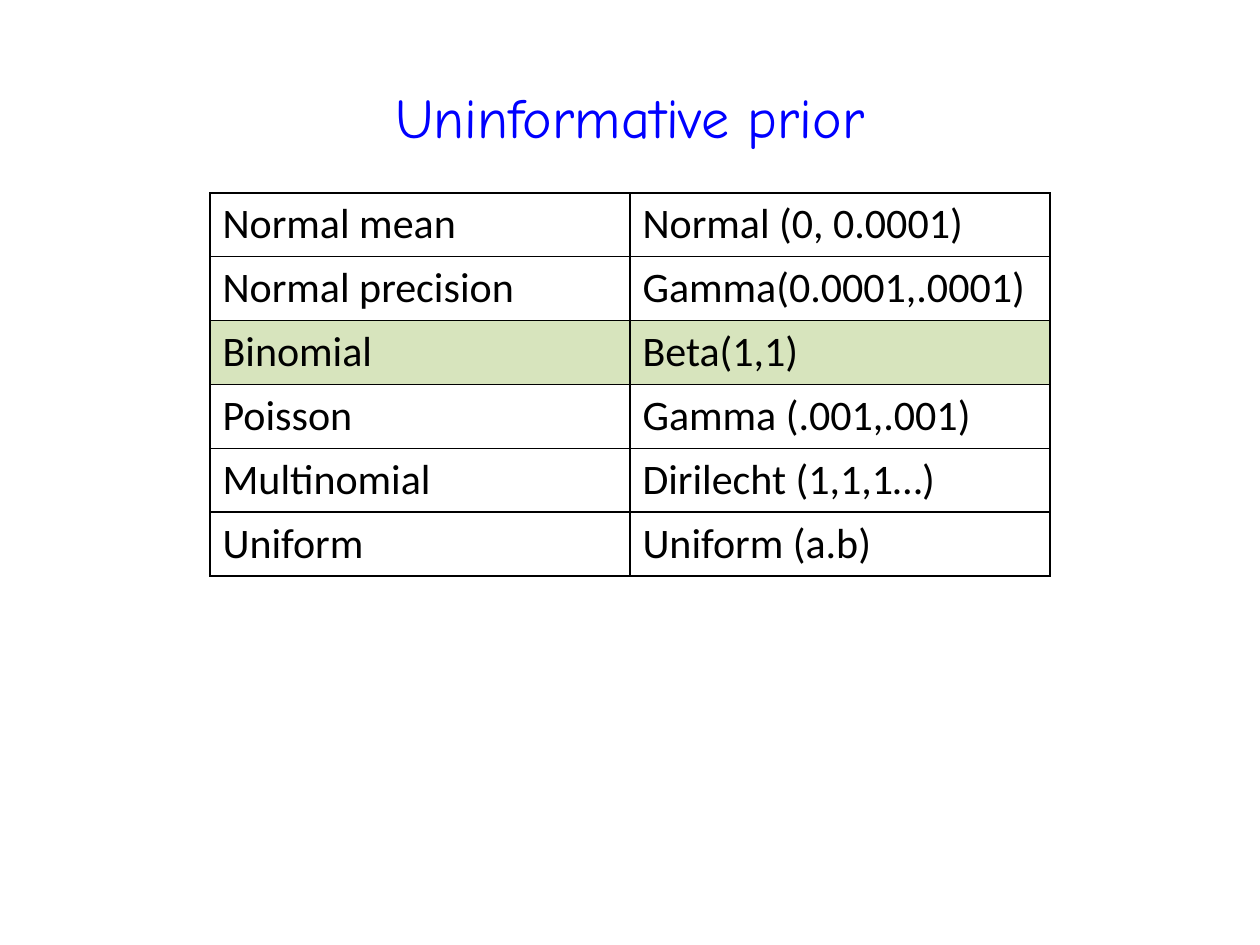
import pptx
import pptx.util
import pptx.dml.color
import pptx.enum.text
import pptx.oxml
import pptx.oxml.ns

BLUE = pptx.dml.color.RGBColor(0x00, 0x00, 0xFF)
BLACK = pptx.dml.color.RGBColor(0x00, 0x00, 0x00)
WHITE = pptx.dml.color.RGBColor(0xFF, 0xFF, 0xFF)
GREEN = pptx.dml.color.RGBColor(0xD7, 0xE4, 0xBD)

PRIORS = [
    ("Normal mean", "Normal (0, 0.0001)"),
    ("Normal precision", "Gamma(0.0001,.0001)"),
    ("Binomial", "Beta(1,1)"),
    ("Poisson", "Gamma (.001,.001)"),
    ("Multinomial", "Dirilecht (1,1,1…)"),
    ("Uniform", "Uniform (a.b)"),
]
HIGHLIGHTED = "Binomial"


def set_borders(cell, color, width):
    properties = cell._tc.get_or_add_tcPr()
    for position, side in enumerate(("lnL", "lnR", "lnT", "lnB")):
        properties.insert(position, pptx.oxml.parse_xml(
            f'<a:{side} {pptx.oxml.ns.nsdecls("a")} w="{width}">'
            f'<a:solidFill><a:srgbClr val="{color}"/></a:solidFill></a:{side}>'))


presentation = pptx.Presentation()
presentation.slide_width = pptx.util.Inches(10)
presentation.slide_height = pptx.util.Inches(7.5)
width, height = presentation.slide_width, presentation.slide_height
slide = presentation.slides.add_slide(presentation.slide_layouts[5])

title = slide.shapes.title
title.left, title.top = int(width * 0.05), int(height * 0.04)
title.width, title.height = int(width * 0.9), pptx.util.Inches(1.25)
title.text_frame.text = "Uninformative prior"
title.text_frame.vertical_anchor = pptx.enum.text.MSO_ANCHOR.MIDDLE
paragraph = title.text_frame.paragraphs[0]
paragraph.alignment = pptx.enum.text.PP_ALIGN.CENTER
paragraph.font.name = "Comic Neue"
paragraph.font.size = pptx.util.Pt(32)
paragraph.font.color.rgb = BLUE

column_width = width // 3
row_height = height // 15
table = slide.shapes.add_table(
    len(PRIORS), 2, column_width // 2, pptx.util.Inches(1.53),
    column_width * 2, row_height * len(PRIORS)).table
table.first_row = False
table.horz_banding = False

for row, prior in enumerate(PRIORS):
    for column, text in enumerate(prior):
        cell = table.cell(row, column)
        cell.text = text
        cell.fill.solid()
        cell.fill.fore_color.rgb = GREEN if prior[0] == HIGHLIGHTED else WHITE
        set_borders(cell, BLACK, pptx.util.Pt(1))
        paragraph = cell.text_frame.paragraphs[0]
        paragraph.font.name = "Calibri"
        paragraph.font.size = pptx.util.Pt(24)
        paragraph.font.color.rgb = BLACK

presentation.save("out.pptx")
